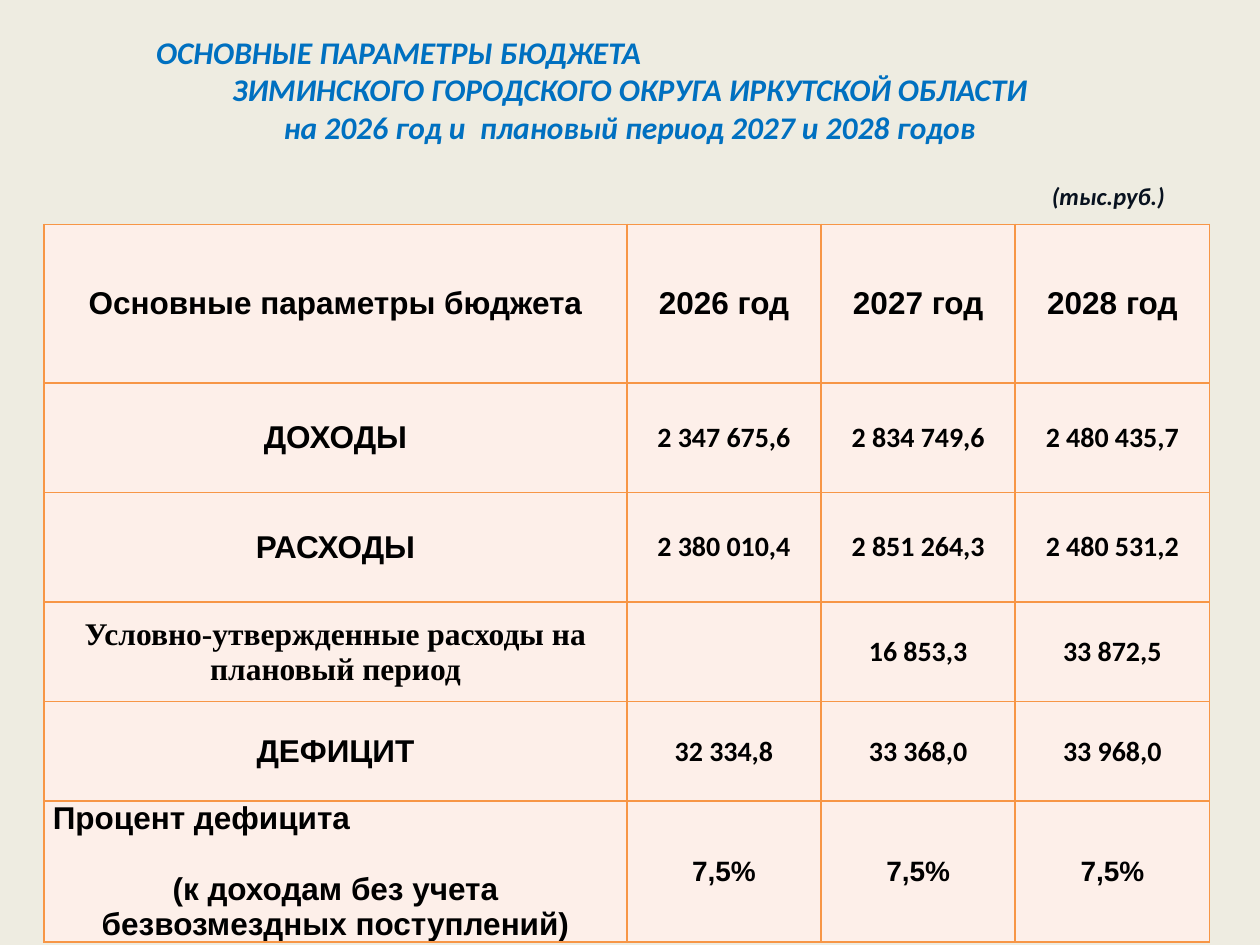
from dataclasses import dataclass

from lxml import etree
from pptx import Presentation
from pptx.dml.color import RGBColor
from pptx.enum.text import MSO_ANCHOR, PP_ALIGN
from pptx.oxml.ns import qn
from pptx.util import Inches, Pt

LEFT, CENTER = PP_ALIGN.LEFT, PP_ALIGN.CENTER
MIDDLE = MSO_ANCHOR.MIDDLE
BLANK_LAYOUT = 6


@dataclass(frozen=True)
class Theme:
    background: str = "EEECE1"
    title: str = "0070C0"
    unit: str = "08121F"
    text: str = "000000"
    cell: str = "FDEFE9"
    border: str = "F79646"
    large: int = 18
    medium: int = 16
    small: int = 14


@dataclass(frozen=True)
class Style:
    font: str
    size: int
    color: str
    italic: bool = False


@dataclass(frozen=True)
class BudgetRow:
    label: str
    values: tuple[str, ...]
    height: float
    label_style: Style
    value_style: Style


THEME = Theme()
TITLE = Style("Calibri", THEME.large, THEME.title, italic=True)
UNIT = Style("Calibri", THEME.small, THEME.unit, italic=True)
LABEL = Style("Arial", THEME.large, THEME.text)
SERIF_LABEL = Style("Times New Roman", THEME.large, THEME.text)
AMOUNT = Style("Calibri", THEME.medium, THEME.text)
PERCENT = Style("Arial", THEME.medium, THEME.text)

TITLE_LINES = (
    "ОСНОВНЫЕ ПАРАМЕТРЫ БЮДЖЕТА\n"
    "ЗИМИНСКОГО ГОРОДСКОГО ОКРУГА ИРКУТСКОЙ ОБЛАСТИ\n"
    "на 2026 год и  плановый период 2027 и 2028 годов"
)
ROWS = (
    BudgetRow("Основные параметры бюджета",
              ("2026 год", "2027 год", "2028 год"), 1.26, LABEL, LABEL),
    BudgetRow("ДОХОДЫ",
              ("2 347 675,6", "2 834 749,6", "2 480 435,7"), 0.87, LABEL, AMOUNT),
    BudgetRow("РАСХОДЫ",
              ("2 380 010,4", "2 851 264,3", "2 480 531,2"), 0.87, LABEL, AMOUNT),
    BudgetRow("Условно-утвержденные расходы на плановый период",
              ("", "16 853,3", "33 872,5"), 0.79, SERIF_LABEL, AMOUNT),
    BudgetRow("ДЕФИЦИТ",
              ("32 334,8", "33 368,0", "33 968,0"), 0.79, LABEL, AMOUNT),
    BudgetRow("Процент дефицита\n(к доходам без учета безвозмездных поступлений)",
              ("7,5%",) * 3, 0.66, LABEL, PERCENT),
)
TABLE_LEFT, TABLE_TOP, TABLE_WIDTH = 0.35, 1.78, 9.25
COLUMN_SHARES = (3, 1, 1, 1)


def write(frame, text: str, style: Style, align=CENTER) -> None:
    frame.text = text
    for para in frame.paragraphs:
        para.alignment = align
        for span in para.runs:
            font = span.font
            font.name, font.size = style.font, Pt(style.size)
            font.bold, font.italic = True, style.italic
            font.color.rgb = RGBColor.from_string(style.color)


def add_text(page, left: float, top: float, width: float, height: float,
             text: str, style: Style, align=CENTER):
    box = page.shapes.add_textbox(*map(Inches, (left, top, width, height)))
    box.text_frame.word_wrap = True
    write(box.text_frame, text, style, align)
    return box.text_frame


def add_borders(cell) -> None:
    properties = cell._tc.get_or_add_tcPr()
    for side in ("a:lnL", "a:lnR", "a:lnT", "a:lnB"):
        line = etree.SubElement(properties, qn(side), w=str(Pt(1)))
        fill = etree.SubElement(line, qn("a:solidFill"))
        etree.SubElement(fill, qn("a:srgbClr"), val=THEME.border)


def format_cell(cell, text: str, style: Style) -> None:
    cell.margin_left = cell.margin_right = Inches(0.07)
    cell.margin_top = cell.margin_bottom = 0
    cell.vertical_anchor = MIDDLE
    add_borders(cell)
    cell.fill.solid()
    cell.fill.fore_color.rgb = RGBColor.from_string(THEME.cell)
    write(cell.text_frame, text, style)


def add_budget_table(page):
    height = sum(row.height for row in ROWS)
    table = page.shapes.add_table(
        len(ROWS), len(COLUMN_SHARES),
        *map(Inches, (TABLE_LEFT, TABLE_TOP, TABLE_WIDTH, height))).table
    for column, share in zip(table.columns, COLUMN_SHARES):
        column.width = Inches(TABLE_WIDTH * share / sum(COLUMN_SHARES))
    for table_row, row in zip(table.rows, ROWS):
        table_row.height = Inches(row.height)
        label_cell, *value_cells = table_row.cells
        format_cell(label_cell, row.label, row.label_style)
        for cell, value in zip(value_cells, row.values):
            format_cell(cell, value, row.value_style)
    return table


def main() -> None:
    deck = Presentation()
    deck.slide_width, deck.slide_height = Inches(10), Inches(7.5)
    page = deck.slides.add_slide(deck.slide_layouts[BLANK_LAYOUT])
    page.background.fill.solid()
    page.background.fill.fore_color.rgb = RGBColor.from_string(THEME.background)

    table = add_budget_table(page)
    percent_para = table.cell(len(ROWS) - 1, 0).text_frame.paragraphs[0]
    percent_para.alignment = LEFT
    percent_para.space_after = Pt(20)

    title = add_text(page, 0, 0.21, 10, 1.01, TITLE_LINES, TITLE)
    first_line = title.paragraphs[0]
    first_line.alignment = LEFT
    first_line._p.get_or_add_pPr().set("marL", str(Inches(1.14)))

    add_text(page, 8.25, 1.39, 1.57, 0.34, "(тыс.руб.)", UNIT, LEFT)
    deck.save("out.pptx")


if __name__ == "__main__":
    main()
